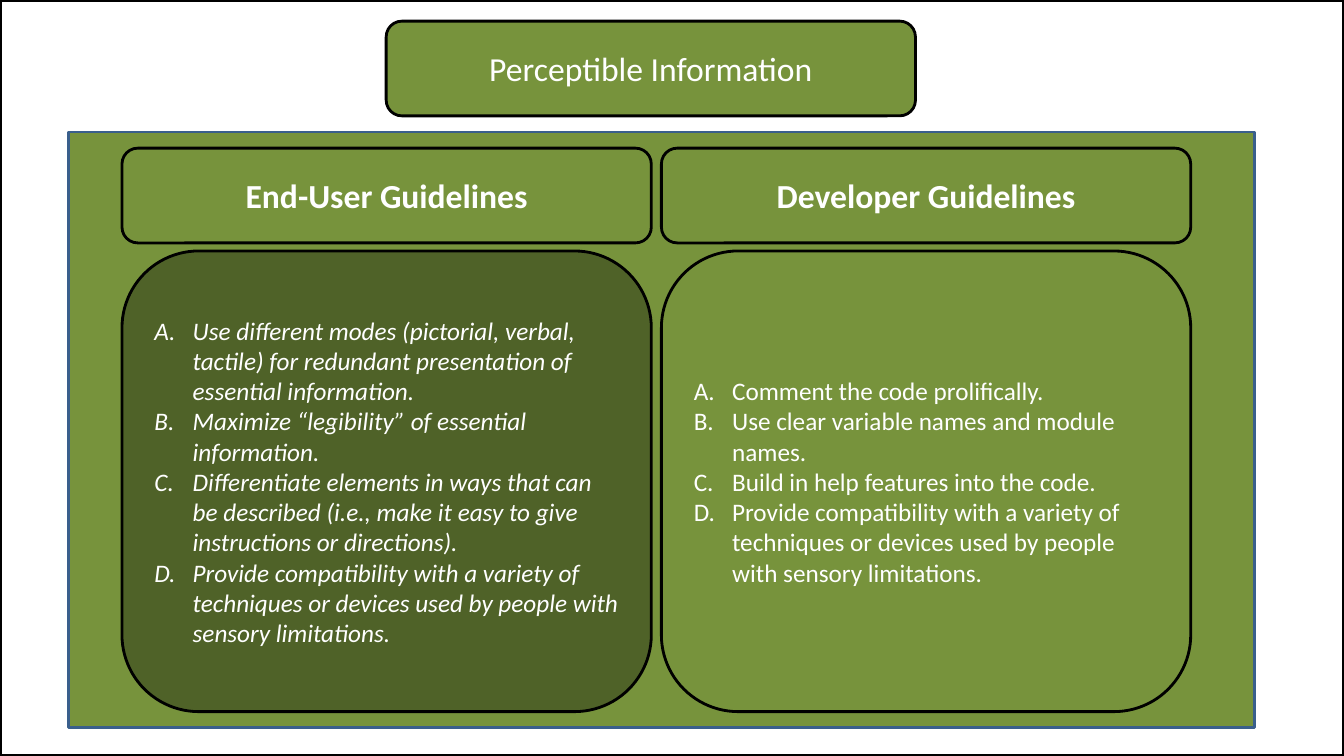
from dataclasses import dataclass

from lxml.etree import SubElement
from pptx import Presentation
from pptx.dml.color import RGBColor
from pptx.enum.shapes import MSO_SHAPE as Preset
from pptx.enum.text import MSO_ANCHOR as Anchor, PP_ALIGN as Align
from pptx.oxml.ns import qn
from pptx.shapes.autoshape import Shape
from pptx.slide import Slide
from pptx.util import Inches, Pt

COLORS = {
    "green": "77933C",
    "dark_green": "4F6228",
    "blue": "3A5F8C",
    "black": "000000",
    "white": "FFFFFF",
}
FONT = "Calibri"
BOX_WIDTH = 5.25
HEADER_HEIGHT = 0.94
HEADER_TOP = 1.47
LIST_TOP = 2.49
LIST_HEIGHT = 4.57
COLUMN_LEFT = 1.21
COLUMN_STEP = 5.35
LIST_INDENT = 0.38


@dataclass
class Column:
    heading: str
    guidelines: list[str]
    fill: str
    italic: bool = False


COLUMNS = [
    Column(
        "End-User Guidelines",
        [
            "Use different modes (pictorial, verbal, tactile) for redundant "
            "presentation of essential information.",
            "Maximize “legibility” of essential information.",
            "Differentiate elements in ways that can be described (i.e., make it "
            "easy to give instructions or directions).",
            "Provide compatibility with a variety of techniques or devices used "
            "by people with sensory limitations.",
        ],
        "dark_green",
        italic=True,
    ),
    Column(
        "Developer Guidelines",
        [
            "Comment the code prolifically.",
            "Use clear variable names and module names.",
            "Build in help features into the code.",
            "Provide compatibility with a variety of techniques or devices used "
            "by people with sensory limitations.",
        ],
        "green",
    ),
]


def color(name: str) -> RGBColor:
    return RGBColor.from_string(COLORS[name])


def add_box(page: Slide, preset: Preset, left: float, top: float, width: float,
            height: float, fill: str | None, line: str = "black",
            line_width: float = 2) -> Shape:
    box = page.shapes.add_shape(
        preset, Inches(left), Inches(top), Inches(width), Inches(height))
    box.shadow.inherit = False
    if fill:
        box.fill.solid()
        box.fill.fore_color.rgb = color(fill)
    else:
        box.fill.background()
    box.line.color.rgb = color(line)
    box.line.width = Pt(line_width)
    return box


def add_texts(box: Shape, texts: list[str], size: int, bold: bool = False,
              italic: bool = False, lettered: bool = False) -> None:
    frame = box.text_frame
    frame.word_wrap = True
    frame.vertical_anchor = Anchor.MIDDLE
    for index, text in enumerate(texts):
        para = frame.add_paragraph() if index else frame.paragraphs[0]
        para.alignment = Align.LEFT if lettered else Align.CENTER
        if lettered:
            properties = para._p.get_or_add_pPr()
            properties.set("marL", str(Inches(LIST_INDENT)))
            properties.set("indent", str(-Inches(LIST_INDENT)))
            SubElement(properties, qn("a:buFont"), typeface="+mj-lt")
            SubElement(properties, qn("a:buAutoNum"), type="alphaUcPeriod")
        span = para.add_run()
        span.text = text
        span.font.name = FONT
        span.font.size = Pt(size)
        span.font.bold = bold
        span.font.italic = italic
        span.font.color.rgb = color("white")


def add_header(page: Slide, left: float, top: float, text: str,
               bold: bool = False) -> None:
    box = add_box(page, Preset.ROUNDED_RECTANGLE, left, top, BOX_WIDTH,
                  HEADER_HEIGHT, "green")
    add_texts(box, [text], 24, bold=bold)


def add_column(page: Slide, left: float, column: Column) -> None:
    add_header(page, left, HEADER_TOP, column.heading, bold=True)
    box = add_box(page, Preset.ROUNDED_RECTANGLE, left, LIST_TOP, BOX_WIDTH,
                  LIST_HEIGHT, column.fill)
    add_texts(box, column.guidelines, 18, italic=column.italic, lettered=True)


def main() -> None:
    deck = Presentation()
    deck.slide_width = Inches(13.33)
    deck.slide_height = Inches(7.5)
    page = deck.slides.add_slide(deck.slide_layouts[6])
    add_box(page, Preset.RECTANGLE, 0.68, 1.31, 11.76, 5.91, "green", "blue")
    for index, column in enumerate(COLUMNS):
        add_column(page, COLUMN_LEFT + index * COLUMN_STEP, column)
    add_header(page, 3.83, 0.21, "Perceptible Information")
    add_box(page, Preset.RECTANGLE, 0, 0, 13.33, 7.5, None, line_width=3)
    deck.save("out.pptx")


if __name__ == "__main__":
    main()
